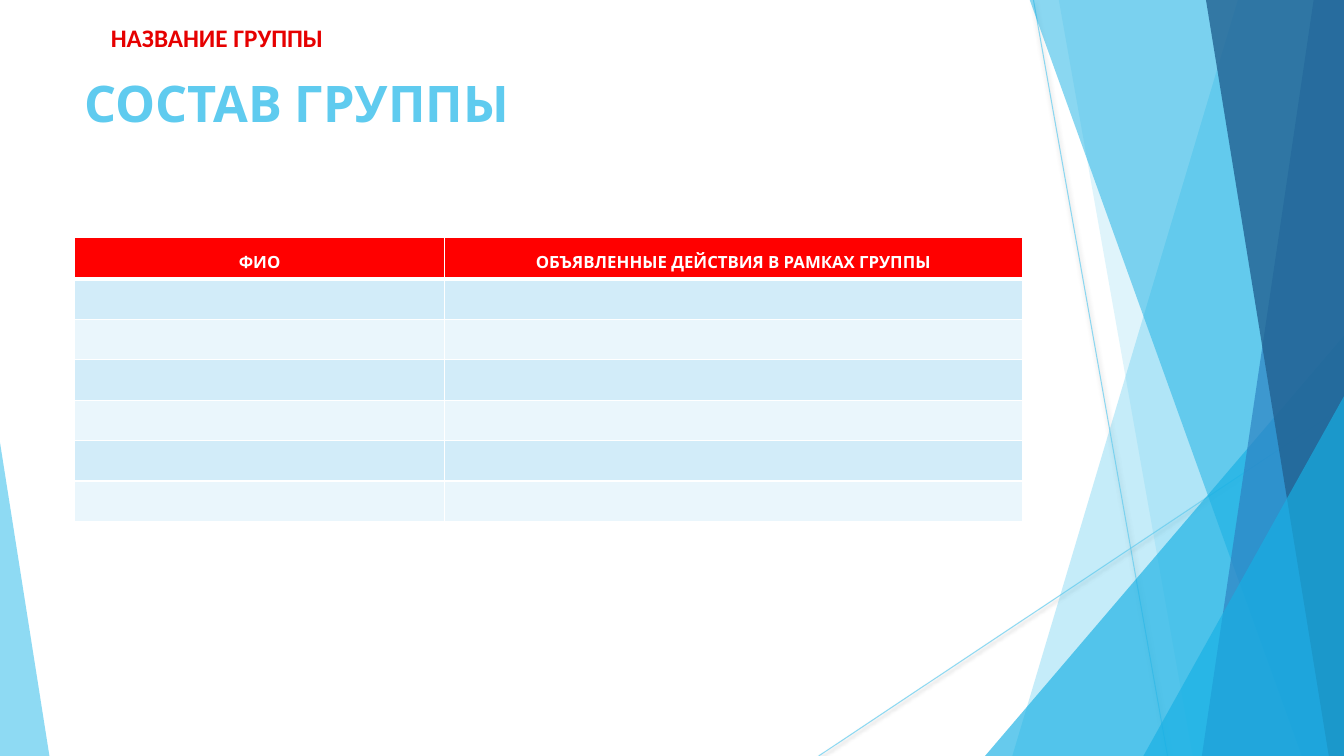
from dataclasses import dataclass
from lxml.etree import SubElement
from pptx import Presentation
from pptx.dml.color import RGBColor as Rgb
from pptx.enum.shapes import MSO_CONNECTOR as Connector, MSO_SHAPE as Preset
from pptx.enum.text import MSO_ANCHOR as Anchor, PP_ALIGN as Align
from pptx.oxml import parse_xml
from pptx.oxml.ns import nsdecls, qn
from pptx.util import Inches, Pt

WIDTH, HEIGHT = 13.33, 7.5


@dataclass(frozen=True)
class Theme:
    sky: str = "5FCBEF"
    azure: str = "17B0E4"
    blue: str = "2E83C3"
    navy: str = "226292"
    white: str = "FFFFFF"
    header: str = "FF0000"
    group: str = "E60000"
    bands: tuple = ("D2ECF9", "EAF6FC")
    heading_font: str = "Karla"
    label_font: str = "Calibri"
    title_size: int = 36
    label_size: int = 18
    header_size: int = 12


class GroupSlide:
    def __init__(self, slide, theme):
        self.shapes = slide.shapes
        self.theme = theme

    def _fade(self, shape, percent):
        for color in shape.element.spPr.iter(qn("a:srgbClr")):
            SubElement(color, qn("a:alpha"), val=str(percent * 1000))

    def _paint(self, shape, color, opacity):
        shape.shadow.inherit = False
        shape.fill.solid()
        shape.fill.fore_color.rgb = Rgb.from_string(color)
        shape.line.fill.background()
        self._fade(shape, opacity)

    def _style(self, paragraph, font, size, color):
        for run in paragraph.runs:
            run.font.name = font
            run.font.size = Pt(size)
            run.font.bold = True
            run.font.color.rgb = Rgb.from_string(color)

    def ray(self, x1, y1, x2, y2):
        ray = self.shapes.add_connector(
            Connector.STRAIGHT, Inches(x1), Inches(y1), Inches(x2), Inches(y2))
        ray.line.width = Pt(0.75)
        ray.line.color.rgb = Rgb.from_string(self.theme.sky)
        self._fade(ray, 70)
        ray.element.spPr.append(parse_xml(
            f'<a:effectLst {nsdecls("a")}><a:outerShdw blurRad="{Pt(3.1)}" '
            f'dist="{Pt(1.6)}" dir="5400000" rotWithShape="0">'
            '<a:srgbClr val="000000"><a:alpha val="38000"/></a:srgbClr>'
            '</a:outerShdw></a:effectLst>'))

    def facet(self, top_x, bottom_x, color, opacity):
        top = -0.01
        outline = self.shapes.build_freeform(Inches(top_x), Inches(top), scale=1.0)
        corners = [(WIDTH, top), (WIDTH, HEIGHT), (bottom_x, HEIGHT)]
        outline.add_line_segments([(Inches(x), Inches(y)) for x, y in corners])
        self._paint(outline.convert_to_shape(), color, opacity)

    def wedge(self, left, top, width, apex, color, opacity):
        wedge = self.shapes.add_shape(
            Preset.ISOSCELES_TRIANGLE, Inches(left), Inches(top),
            Inches(width), Inches(HEIGHT - top))
        wedge.adjustments[0] = apex
        self._paint(wedge, color, opacity)

    def text(self, wording, box, font, size, color, anchor):
        frame = self.shapes.add_textbox(*map(Inches, box)).text_frame
        frame.word_wrap = True
        frame.vertical_anchor = anchor
        frame.text = wording
        self._style(frame.paragraphs[0], font, size, color)

    def _cell(self, cell, color, bottom_width):
        properties = cell._tc.get_or_add_tcPr()
        for side, width in (("L", 1), ("R", 1), ("T", 1), ("B", bottom_width)):
            properties.append(parse_xml(
                f'<a:ln{side} {nsdecls("a")} w="{Pt(width)}"><a:solidFill>'
                f'<a:srgbClr val="{self.theme.white}"/></a:solidFill></a:ln{side}>'))
        cell.fill.solid()
        cell.fill.fore_color.rgb = Rgb.from_string(color)

    def members(self, headings, empty_rows, left, top, widths, header_height, row_height):
        theme = self.theme
        table = self.shapes.add_table(
            empty_rows + 1, len(headings), Inches(left), Inches(top),
            Inches(sum(widths)),
            Inches(header_height + empty_rows * row_height)).table
        for column, width in zip(table.columns, widths):
            column.width = Inches(width)
        for index, row in enumerate(table.rows):
            row.height = Inches(row_height if index else header_height)
            color = theme.bands[(index - 1) % 2] if index else theme.header
            for cell in row.cells:
                self._cell(cell, color, 1 if index else 3)
        for cell, heading in zip(table.rows[0].cells, headings):
            cell.text_frame.text = heading
            paragraph = cell.text_frame.paragraphs[0]
            paragraph.alignment = Align.CENTER
            paragraph.line_spacing = 1.5
            self._style(paragraph, theme.heading_font, theme.header_size, theme.white)


def main():
    deck = Presentation()
    deck.slide_width, deck.slide_height = Inches(WIDTH), Inches(HEIGHT)
    theme = Theme()
    page = GroupSlide(deck.slides.add_slide(deck.slide_layouts[6]), theme)

    page.ray(10.25, 0, 11.58, HEIGHT)
    page.ray(WIDTH, 4.03, 8.12, HEIGHT)
    page.facet(12.28, 10.04, theme.sky, 36)
    page.facet(10.5, 11.83, theme.sky, 20)
    page.wedge(9.77, 3.33, 3.56, 1, theme.azure, 66)
    page.facet(10.21, 12.91, theme.azure, 50)
    page.facet(13.03, 11.92, theme.blue, 70)
    page.facet(11.96, 13.18, theme.navy, 80)
    page.wedge(11.34, 3.93, 1.99, 1, theme.azure, 66)
    page.wedge(0, 4.39, 0.49, 0, theme.sky, 70)

    page.text("СОСТАВ ГРУППЫ", (0.74, 0.67, 9.4, 1.44),
              theme.heading_font, theme.title_size, theme.sky, Anchor.TOP)
    page.members(("ФИО", "ОБЪЯВЛЕННЫЕ ДЕЙСТВИЯ В РАМКАХ ГРУППЫ"), 6,
                 0.74, 2.36, (3.67, 5.73), 0.41, 0.39)
    page.text("НАЗВАНИЕ ГРУППЫ", (1, 0.18, 7.15, 0.39),
              theme.label_font, theme.label_size, theme.group, Anchor.MIDDLE)
    deck.save("out.pptx")


if __name__ == "__main__":
    main()
